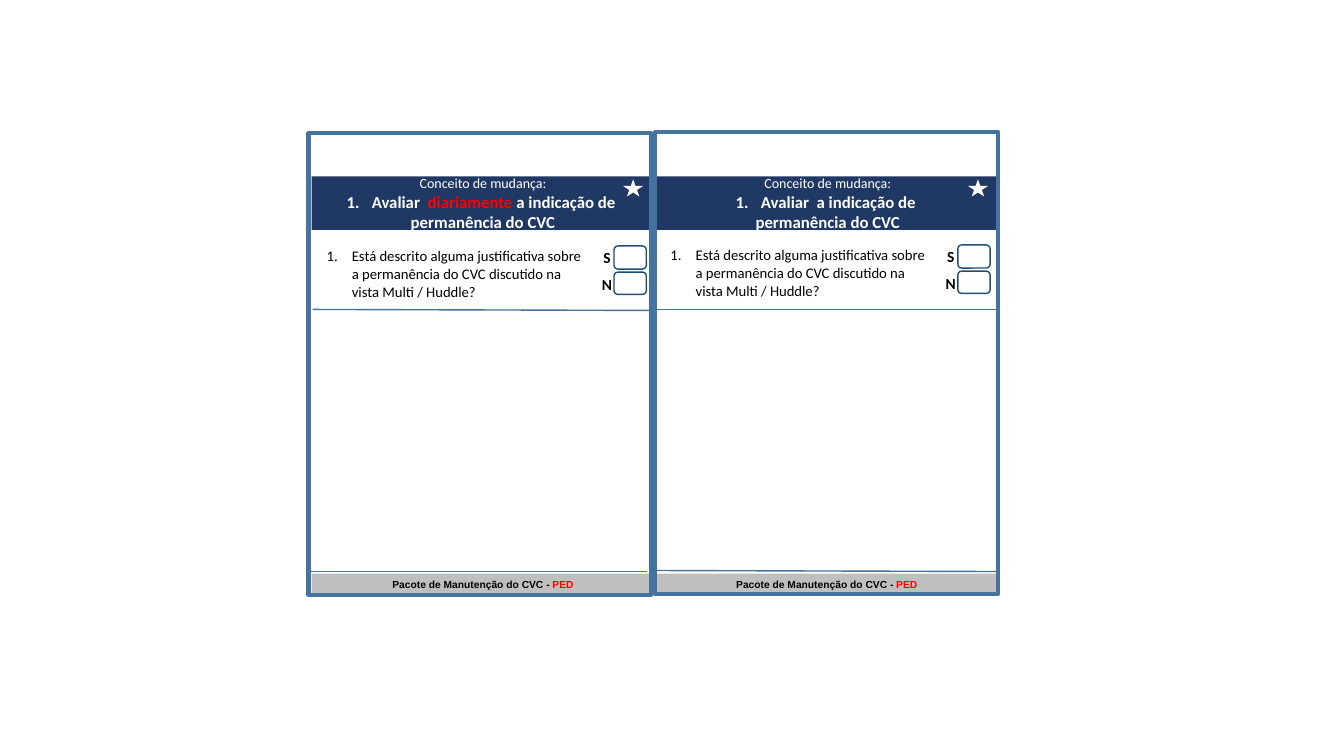
from dataclasses import dataclass

from lxml import etree
from pptx import Presentation
from pptx.dml.color import RGBColor
from pptx.enum.shapes import MSO_CONNECTOR, MSO_SHAPE
from pptx.enum.text import MSO_ANCHOR, MSO_AUTO_SIZE, PP_ALIGN
from pptx.oxml.ns import qn
from pptx.util import Inches, Pt

RECT = MSO_SHAPE.RECTANGLE
ROUNDED = MSO_SHAPE.ROUNDED_RECTANGLE
STAR = MSO_SHAPE.STAR_5_POINT
STRAIGHT = MSO_CONNECTOR.STRAIGHT
TOP, MIDDLE = MSO_ANCHOR.TOP, MSO_ANCHOR.MIDDLE
LEFT, CENTER = PP_ALIGN.LEFT, PP_ALIGN.CENTER
NO_FIT, GROW = MSO_AUTO_SIZE.NONE, MSO_AUTO_SIZE.SHAPE_TO_FIT_TEXT
COMPARISON_LAYOUT = 4

COLORS = {
    "navy": "203864",
    "gray": "BFBFBF",
    "frame": "43739E",
    "box": "1F4E79",
    "white": "FFFFFF",
    "black": "000000",
    "red": "FF0000",
}
QUESTION = ("Está descrito alguma justificativa sobre a permanência do CVC "
            "discutido na vista Multi / Huddle?")


@dataclass(frozen=True)
class Run:
    text: str
    color: str | None = None


@dataclass(frozen=True)
class Para:
    runs: tuple[Run, ...]
    size: float
    color: str
    bold: bool = False
    font: str = "Calibri"
    align: PP_ALIGN = CENTER
    numbered: bool = False


@dataclass(frozen=True)
class Panel:
    left: float
    heading_left: float
    frame_left: float
    frame_top: float
    answer_shift: float
    rule: tuple[float, float, float, float]
    base_rule: tuple[float, float, float, float]
    action: tuple[Run, ...]
    heading_idx: int
    question_idx: int


@dataclass(frozen=True)
class Answer:
    label: str
    label_top: float
    label_height: float
    box_top: float
    box_height: float


PANELS = (
    Panel(3.09, 3.09, 3.06, 1.32, 0, (3.1, 3.07, 6.48, 3.08),
          (3.04, 5.67, 6.42, 5.67),
          (Run("Avaliar  "), Run("diariamente", "red"), Run(" a indicação de ")),
          1, 2),
    Panel(6.5, 6.51, 6.5, 1.31, -0.01, (6.51, 3.07, 9.9, 3.07),
          (6.5, 5.66, 9.88, 5.67),
          (Run("Avaliar  a indicação de "),), 3, 4),
)
ANSWERS = (
    Answer("S", 2.47, 0.17, 2.44, 0.23),
    Answer("N", 2.75, 0.14, 2.7, 0.22),
)


def rgb(name: str) -> RGBColor:
    return RGBColor.from_string(COLORS[name])


def place(sp, left: float, top: float, width: float, height: float) -> None:
    sp.left, sp.top = Inches(left), Inches(top)
    sp.width, sp.height = Inches(width), Inches(height)


def set_bullet(p, numbered: bool) -> None:
    pPr = p._p.get_or_add_pPr()
    pPr.set("marL", str(Inches(0.25) if numbered else 0))
    pPr.set("indent", str(Inches(-0.25) if numbered else 0))
    bullet = etree.Element(qn("a:buAutoNum" if numbered else "a:buNone"))
    if numbered:
        bullet.set("type", "arabicPeriod")
    pPr.find(qn("a:defRPr")).addprevious(bullet)


def write(sp, paras: tuple[Para, ...], anchor=MIDDLE, fit=NO_FIT) -> None:
    tf = sp.text_frame
    tf.word_wrap = True
    tf.auto_size = fit
    tf.vertical_anchor = anchor
    for i, para in enumerate(paras):
        p = tf.add_paragraph() if i else tf.paragraphs[0]
        p.alignment = para.align
        p.space_before = Pt(0)
        p.font.size = Pt(para.size)
        p.font.name = para.font
        p.font.bold = para.bold
        p.font.color.rgb = rgb(para.color)
        set_bullet(p, para.numbered)
        for run in para.runs:
            r = p.add_run()
            r.text = run.text
            if run.color:
                r.font.color.rgb = rgb(run.color)


def add_block(slide, kind, left: float, top: float, width: float, height: float,
              fill: str | None = None, line: str | None = None,
              weight: float = 1):
    sp = slide.shapes.add_shape(kind, Inches(left), Inches(top),
                                Inches(width), Inches(height))
    sp.shadow.inherit = False
    if fill:
        sp.fill.solid()
        sp.fill.fore_color.rgb = rgb(fill)
    else:
        sp.fill.background()
    if line:
        sp.line.color.rgb = rgb(line)
        sp.line.width = Pt(weight)
    else:
        sp.line.fill.background()
    return sp


def add_rule(slide, ends: tuple[float, float, float, float]) -> None:
    cxn = slide.shapes.add_connector(STRAIGHT, *(Inches(v) for v in ends))
    cxn.line.color.rgb = rgb("frame")
    cxn.line.width = Pt(1)
    etree.SubElement(cxn._element.spPr, qn("a:effectLst"))


def add_answer(slide, panel: Panel, answer: Answer) -> None:
    shift = panel.answer_shift
    add_block(slide, ROUNDED, panel.left + 3, answer.box_top + shift,
              0.32, answer.box_height, line="box")
    sp = slide.shapes.add_textbox(
        Inches(panel.left + 2.81), Inches(answer.label_top + shift),
        Inches(0.24), Inches(answer.label_height))
    tf = sp.text_frame
    tf.margin_left = tf.margin_right = tf.margin_top = tf.margin_bottom = 0
    write(sp, (Para((Run(answer.label),), 11, "black", True),))


def add_panel(slide, panel: Panel) -> None:
    placeholders = {sp.placeholder_format.idx: sp for sp in slide.placeholders}
    footer = add_block(slide, RECT, panel.left, 5.69, 3.4, 0.22, "gray")
    write(footer, (Para((Run("Pacote de Manutenção do CVC - "), Run("PED", "red")),
                        7.3, "black", True, "Arial"),), TOP, GROW)

    heading = placeholders[panel.heading_idx]
    place(heading, panel.heading_left, 1.75, 3.4, 0.53)
    heading.fill.solid()
    heading.fill.fore_color.rgb = rgb("navy")
    write(heading, (
        Para((Run("Conceito de mudança:"),), 10, "white"),
        Para(panel.action, 12, "white", True, numbered=True),
        Para((Run("permanência do CVC"),), 12, "white", True),
    ))

    question = placeholders[panel.question_idx]
    place(question, panel.left + 0.05, 2.46 + panel.answer_shift, 2.8, 0.51)
    write(question, (Para((Run(QUESTION),), 10.5, "black", align=LEFT,
                          numbered=True),))

    for answer in ANSWERS:
        add_answer(slide, panel, answer)
    add_block(slide, RECT, panel.frame_left, panel.frame_top, 3.4, 4.58,
              line="frame", weight=3)
    add_rule(slide, panel.rule)
    add_block(slide, STAR, panel.heading_left + 3.09, 1.78, 0.2, 0.17, "white")
    add_rule(slide, panel.base_rule)


def main() -> None:
    prs = Presentation()
    prs.slide_width, prs.slide_height = Inches(13.33), Inches(7.5)
    slide = prs.slides.add_slide(prs.slide_layouts[COMPARISON_LAYOUT])
    title = slide.shapes.title._element
    title.getparent().remove(title)
    for panel in PANELS:
        add_panel(slide, panel)
    prs.save("out.pptx")


if __name__ == "__main__":
    main()
